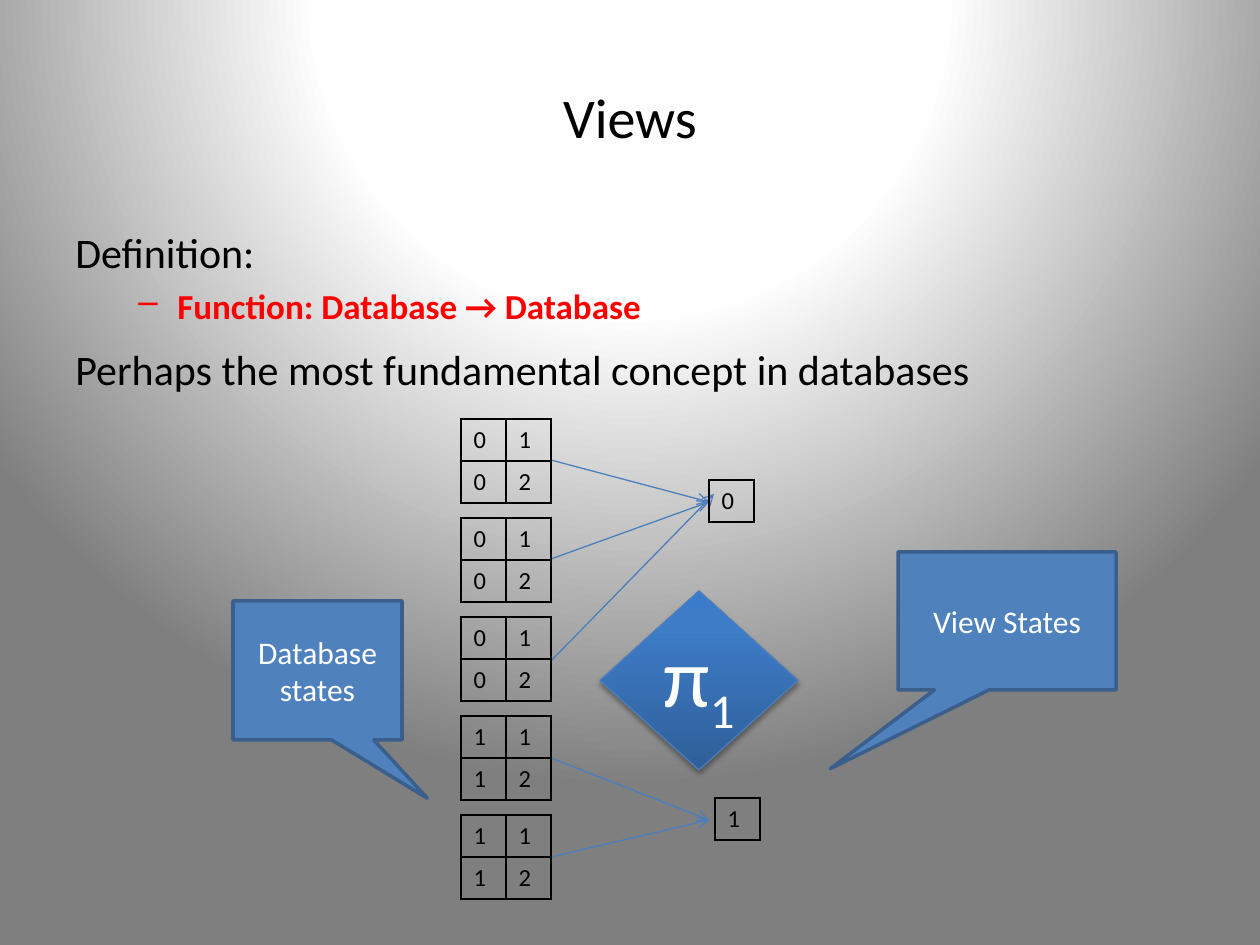
from lxml import etree
from pptx import Presentation, util as u
from pptx.dml.color import RGBColor
from pptx.enum import shapes, text
from pptx.oxml import parse_xml
from pptx.oxml.ns import nsdecls, qn

BLACK = RGBColor(0x00, 0x00, 0x00)
WHITE = RGBColor(0xFF, 0xFF, 0xFF)
NEAR_WHITE = RGBColor(0xFE, 0xFE, 0xFE)
GREY = RGBColor(0x7F, 0x7F, 0x7F)
RED = RGBColor(0xFF, 0x00, 0x00)
BLUE = RGBColor(0x4F, 0x81, 0xBD)
EDGE = RGBColor(0x3A, 0x5F, 0x8C)
ARROW = RGBColor(0x4B, 0x7E, 0xBC)
DARK_BLUE = RGBColor(0x2F, 0x5F, 0x99)
MID_BLUE = RGBColor(0x3D, 0x7C, 0xC7)
LIGHT_BLUE = RGBColor(0x3A, 0x7C, 0xCB)


def px(n):
    return u.Emu(round(n * 914400 / 126))


def gradient(stops, direction):
    gs = "".join(f'<a:gs pos="{pos * 1000}"><a:srgbClr val="{rgb}"/></a:gs>' for pos, rgb in stops)
    return f'<a:gradFill {nsdecls("a")} rotWithShape="1"><a:gsLst>{gs}</a:gsLst>{direction}</a:gradFill>'


class Deck:
    font = "Calibri"

    def __init__(self, width, height):
        self.prs = Presentation()
        self.prs.slide_width, self.prs.slide_height = px(width), px(height)
        self.s = self.prs.slides.add_slide(self.prs.slide_layouts[6])

    def background(self, fill):
        self.s._element.cSld.insert(0, parse_xml(
            f'<p:bg {nsdecls("p", "a")}><p:bgPr>{fill}<a:effectLst/></p:bgPr></p:bg>'))

    def run(self, p, words, size, color, bold=False):
        r = p.add_run()
        r.text = words
        for key, value in {"name": self.font, "size": u.Pt(size), "bold": bold}.items():
            setattr(r.font, key, value)
        r.font.color.rgb = color
        return r

    def centered(self, tf, lines, size, color, wrap=False):
        for key, value in {"word_wrap": wrap, "vertical_anchor": text.MSO_ANCHOR.MIDDLE}.items():
            setattr(tf, key, value)
        for i, words in enumerate(lines):
            p = tf.add_paragraph() if i else tf.paragraphs[0]
            p.alignment = text.PP_ALIGN.CENTER
            self.run(p, words, size, color)

    def title(self, box, words):
        tf = self.s.shapes.add_textbox(*map(px, box)).text_frame
        self.centered(tf, [words], 32, BLACK, wrap=True)

    def body(self, box, items):
        tf = self.s.shapes.add_textbox(*map(px, box)).text_frame
        tf.word_wrap = True
        for i, (words, size, color, before, dash) in enumerate(items):
            p = tf.add_paragraph() if i else tf.paragraphs[0]
            p.space_before = u.Pt(before)
            self.run(p, words, size, color, bold=dash)
            if dash:
                p.level = 1
                pPr = p._p.get_or_add_pPr()
                pPr.set("marL", str(px(102)))
                pPr.set("indent", str(px(-39)))
                etree.SubElement(pPr, qn("a:buChar")).set("char", "–")

    def shape(self, kind, box, lines, size, line, weight):
        sp = self.s.shapes.add_shape(kind, *map(px, box))
        sp.shadow.inherit = False
        sp.fill.solid()
        sp.fill.fore_color.rgb = BLUE
        sp.line.color.rgb = line
        sp.line.width = u.Pt(weight)
        self.centered(sp.text_frame, lines, size, WHITE)
        return sp

    def callout(self, box, lines, tip):
        sp = self.shape(shapes.MSO_SHAPE.RECTANGULAR_CALLOUT, box, lines, 18, EDGE, 2)
        for i, value in enumerate(tip):
            sp.adjustments[i] = value

    def diamond(self, box, symbol, subscript, fill):
        sp = self.shape(shapes.MSO_SHAPE.FLOWCHART_DECISION, box, [symbol], 48, ARROW, 0.75)
        r = self.run(sp.text_frame.paragraphs[0], subscript, 48, WHITE)
        r._r.get_or_add_rPr().set("baseline", "-25000")
        spPr = sp._element.spPr
        spPr.replace(spPr.find(qn("a:solidFill")), parse_xml(fill))
        spPr.find(qn("a:effectLst")).append(parse_xml(
            f'<a:outerShdw {nsdecls("a")} blurRad="{u.Pt(3.1)}" dist="{u.Pt(1.8)}" dir="5400000" '
            f'rotWithShape="0"><a:srgbClr val="{BLACK}"><a:alpha val="35000"/></a:srgbClr></a:outerShdw>'))

    def arrow(self, *ends):
        c = self.s.shapes.add_connector(shapes.MSO_CONNECTOR.STRAIGHT, *map(px, ends))
        c.line.color.rgb = ARROW
        c.line.width = u.Pt(0.75)
        etree.SubElement(c.line._get_or_add_ln(), qn("a:tailEnd")).set("type", "arrow")
        etree.SubElement(c._element.spPr, qn("a:effectLst"))

    def table(self, x, y, rows, col=45, row=42):
        nr, nc = len(rows), len(rows[0])
        t = self.s.shapes.add_table(nr, nc, px(x), px(y), px(col * nc), px(row * nr)).table
        t.first_row = t.horz_banding = False
        for i, values in enumerate(rows):
            for j, value in enumerate(values):
                cell = t.cell(i, j)
                self.run(cell.text_frame.paragraphs[0], value, 14, BLACK)
                cell.fill.background()
                tcPr = cell._tc.get_or_add_tcPr()
                for k, side in enumerate("LRTB"):
                    tcPr.insert(k, parse_xml(
                        f'<a:ln{side} {nsdecls("a")} w="{u.Pt(1)}"><a:solidFill>'
                        f'<a:srgbClr val="{BLACK}"/></a:solidFill></a:ln{side}>'))


def main():
    d = Deck(1260, 945)
    d.background(gradient(
        [(0, WHITE), (40, NEAR_WHITE), (100, GREY)],
        '<a:path path="circle"><a:fillToRect l="50000" t="-80000" r="50000" b="180000"/></a:path>'))
    d.title((63, 38, 1134, 157), "Views")
    d.body((63, 220, 1134, 624), [
        ("Definition:", 24, BLACK, 1, False),
        ("Function: Database → Database", 20, RED, 4.5, True),
        ("Perhaps the most fundamental concept in databases", 24, BLACK, 9.5, False)])
    for y, x_end, y_end in [(460, 709, 502), (559, 709, 502), (661, 714, 494),
                            (758, 709, 820), (857, 709, 820)]:
        d.arrow(551, y, x_end, y_end)
    d.callout((233, 601, 169, 139), ["Database", "states"], (0.65, 0.92))
    d.callout((898, 552, 218, 138), ["View States"], (-0.81, 1.07))
    for i, key in enumerate("00011"):
        d.table(461, 419 + 99 * i, [[key, "1"], [key, "2"]])
    d.table(709, 480, [["0"]])
    d.table(715, 798, [["1"]])
    d.diamond((600, 591, 198, 179), "π", "1", gradient(
        [(0, DARK_BLUE), (80, MID_BLUE), (100, LIGHT_BLUE)], '<a:lin ang="16200000" scaled="0"/>'))
    d.prs.save("out.pptx")


if __name__ == "__main__":
    main()
